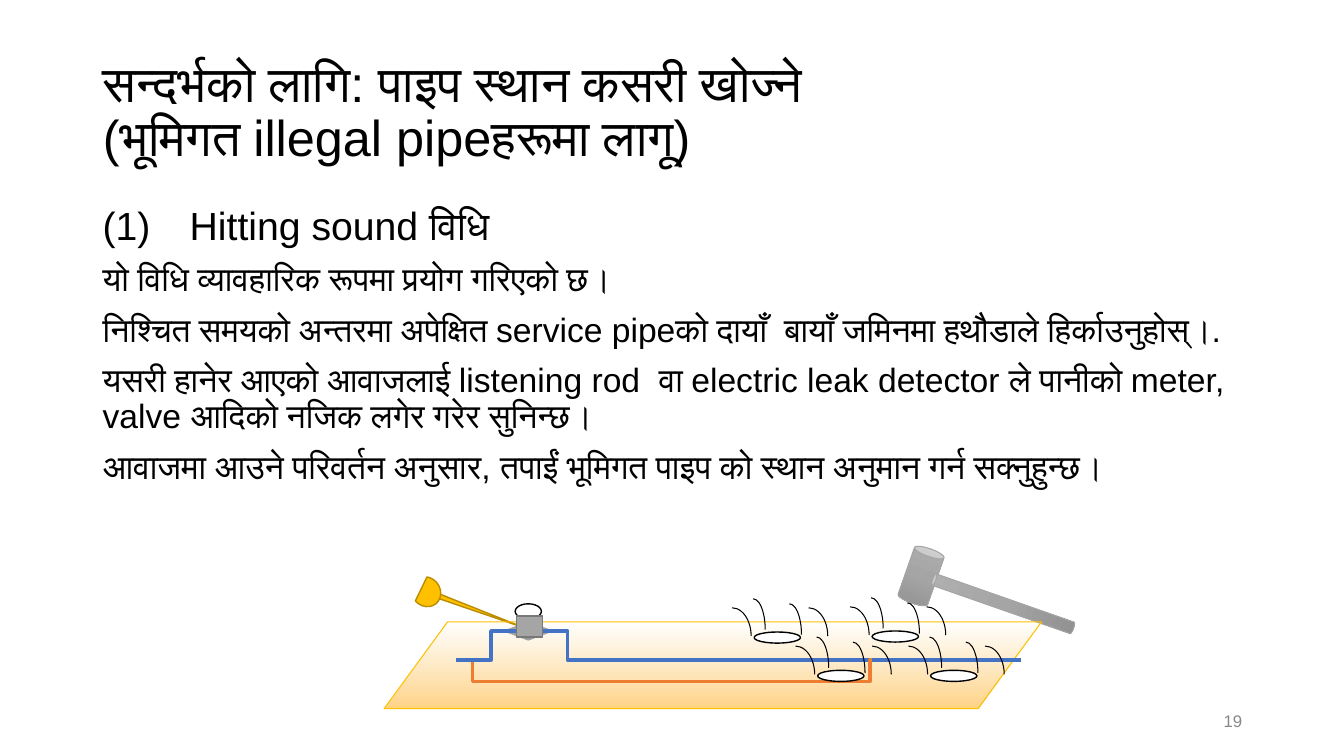
import dataclasses

import lxml.etree
import pptx
import pptx.dml.color
import pptx.enum.shapes
import pptx.enum.text
import pptx.oxml
import pptx.oxml.ns
import pptx.util

Inches = pptx.util.Inches
SHAPES = pptx.enum.shapes.MSO_SHAPE
CONNECTORS = pptx.enum.shapes.MSO_CONNECTOR
ALIGN = pptx.enum.text.PP_ALIGN
ANCHOR = pptx.enum.text.MSO_ANCHOR
qn = pptx.oxml.ns.qn


@dataclasses.dataclass(frozen=True)
class Theme:
    font: str = "Arial"
    ink: str = "000000"
    muted: str = "888888"
    white: str = "FFFFFF"
    gold: str = "FFC000"
    gold_edge: str = "BA8C00"
    grey: str = "A5A5A5"
    grey_edge: str = "787878"
    blue: str = "4472C4"
    orange: str = "ED7D31"
    title: int = 36
    heading: int = 28
    body: int = 24
    small: int = 12
    thin: float = 0.75
    outline: float = 1
    pipe: float = 2.5
    # Gradient stops: position in percent, colour, opacity in percent
    metal: tuple = ((0, "AFAFAF", 100), (50, "A5A5A5", 100), (100, "919191", 100))
    ground: tuple = ((0, "FFDC9B", 0), (95, "FFD68D", 100), (100, "FFD478", 100))


THEME = Theme()

TITLE = "सन्दर्भको लागि: पाइप स्थान कसरी खोज्ने\v(भूमिगत illegal pipeहरूमा लागू)"
HEADING = "(1)\u3000Hitting sound विधि".replace("\u3000", "　")
STEPS = (
    "यो विधि व्यावहारिक रूपमा प्रयोग गरिएको छ।",
    "निश्चित समयको अन्तरमा अपेक्षित service pipeको दायाँ  बायाँ जमिनमा हथौडाले हिर्काउनुहोस्।.",
    "यसरी हानेर आएको आवाजलाई listening rod  वा electric leak detector ले पानीको meter, "
    "valve आदिको नजिक लगेर गरेर सुनिन्छ।",
    "आवाजमा आउने परिवर्तन अनुसार, तपाईं भूमिगत पाइप को स्थान अनुमान गर्न सक्नुहुन्छ।",
)


def rgb(value):
    return pptx.dml.color.RGBColor.from_string(value)


def assign(target, values):
    for name, value in values.items():
        setattr(target, name, value)


def place(shape, box):
    names = ("left", "top", "width", "height")
    assign(shape, dict(zip(names, map(Inches, box))))


def write(shape, lines, anchor=ANCHOR.TOP, align=ALIGN.LEFT, spacing=0.9):
    """Fill a text shape with (text, size, colour) lines."""
    frame = shape.text_frame
    assign(frame, {
        "word_wrap": True, "vertical_anchor": anchor,
        "auto_size": pptx.enum.text.MSO_AUTO_SIZE.NONE,
        "margin_left": Inches(0.1), "margin_right": Inches(0.1),
        "margin_top": Inches(0.05), "margin_bottom": Inches(0.05),
    })
    for index, (text, size, color) in enumerate(lines):
        para = frame.add_paragraph() if index else frame.paragraphs[0]
        para.text = text
        assign(para, {"alignment": align, "line_spacing": spacing,
                      "space_before": pptx.util.Pt(10 if index else 0)})
        for span in para.runs:
            assign(span.font, {"name": THEME.font, "size": pptx.util.Pt(size)})
            span.font.color.rgb = rgb(color)


def fill_gradient(shape, stops):
    shape.fill.gradient()
    shape.fill.gradient_angle = 270
    stop_list = shape.fill._xPr.find(qn("a:gradFill")).find(qn("a:gsLst"))
    for stop in list(stop_list):
        stop_list.remove(stop)
    for position, color, opacity in stops:
        stop = lxml.etree.SubElement(stop_list, qn("a:gs"), pos=str(position * 1000))
        tint = lxml.etree.SubElement(stop, qn("a:srgbClr"), val=color)
        if opacity < 100:
            lxml.etree.SubElement(tint, qn("a:alpha"), val=str(opacity * 1000))


def add_part(group, kind, box, fill, edge, weight=THEME.outline, turn=0):
    part = group.shapes.add_shape(kind, *map(Inches, box))
    part.shadow.inherit = False
    part.rotation = turn
    if fill is None:
        part.fill.background()
    elif isinstance(fill, tuple):
        fill_gradient(part, fill)
    else:
        part.fill.solid()
        part.fill.fore_color.rgb = rgb(fill)
    part.line.color.rgb = rgb(edge)
    part.line.width = pptx.util.Pt(weight)
    return part


def add_pipe(group, start, end, color, bend=None):
    kind = CONNECTORS.STRAIGHT if bend is None else CONNECTORS.ELBOW
    pipe = group.shapes.add_connector(kind, *map(Inches, start + end))
    pipe.line.color.rgb = rgb(color)
    pipe.line.width = pptx.util.Pt(THEME.pipe)
    properties = pipe._element.spPr
    lxml.etree.SubElement(properties, qn("a:effectLst"))
    if bend is not None:
        guides = properties.find(qn("a:prstGeom")).get_or_add_avLst()
        lxml.etree.SubElement(guides, qn("a:gd"), name="adj1",
                              fmla=f"val {round(bend * 100000)}")


def add_title(page, box):
    title = page.shapes.title
    place(title, box)
    write(title, [(TITLE, THEME.title, THEME.ink)], ANCHOR.MIDDLE)


def add_body(page, box):
    body = page.shapes.add_textbox(*map(Inches, box))
    lines = [(HEADING, THEME.heading, THEME.ink)]
    lines += [(step, THEME.body, THEME.ink) for step in STEPS]
    write(body, lines)


def add_page_number(page, box):
    number = page.shapes.add_textbox(*map(Inches, box))
    write(number, [("19", THEME.small, THEME.muted)], ANCHOR.MIDDLE, ALIGN.RIGHT, 1)


def add_impact(group, left, top):
    """A struck spot with two sound waves on either side."""
    add_part(group, SHAPES.OVAL, (left, top, 0.46, 0.11), THEME.white, THEME.ink)
    wide, narrow = (0.38, 0.56), (0.24, 0.61)
    waves = ((-0.41, -0.24, wide), (-0.13, -0.33, narrow),
             (0.23, -0.28, narrow), (0.35, -0.24, wide))
    for shift, rise, size in waves:
        add_part(group, SHAPES.ARC, (left + shift, top + rise) + size,
                 None, THEME.ink, THEME.thin)


def add_scene(page, left, top):
    group = page.shapes.add_group_shape()

    def part(kind, x, y, width, height, *style):
        return add_part(group, kind, (left + x, top + y, width, height), *style)

    def pipe(x1, y1, x2, y2, color, bend=None):
        add_pipe(group, (left + x1, top + y1), (left + x2, top + y2), color, bend)

    # Listening rod and hammer
    gold = (THEME.gold, THEME.gold_edge, THEME.outline)
    metal = (THEME.metal, THEME.grey, THEME.thin)
    part(SHAPES.ISOSCELES_TRIANGLE, 0.91, 0.31, 0.05, 1, *gold, 110.3)
    part(SHAPES.CHORD, 0.26, 0.48, 0.31, 0.28, *gold, 228.9)
    part(SHAPES.CAN, 5.17, 0.18, 0.31, 0.57, *metal, 19.3)
    part(SHAPES.CAN, 6.08, 0, 0.12, 1.48, *metal, 289.3)

    # Ground and meter pit
    ground = part(SHAPES.PARALLELOGRAM, 0, 0.92, 6.52, 0.86,
                  THEME.ground, THEME.gold, THEME.thin)
    ground.adjustments[0] = 0.732
    part(SHAPES.DIAMOND, 1.19, 0.92, 0.48, 0.18, *metal)

    # Service pipe in blue, illegal branch in orange
    raised, level, buried = 1.01, 1.3, 1.51
    pipe(2.23, level, 1.41, raised, THEME.blue, 0.5)
    pipe(0.91, level, 1.82, buried, THEME.orange, -0.035)
    pipe(6.32, level, 2.23, level, THEME.blue)
    pipe(1.41, raised, 0.71, level, THEME.blue, 0.5)

    # Meter
    part(SHAPES.OVAL, 1.3, 0.74, 0.26, 0.15, THEME.white, THEME.ink)
    part(SHAPES.RECTANGLE, 1.31, 0.86, 0.26, 0.21, THEME.grey, THEME.grey_edge)
    pipe(1.82, buried, 4.84, level, THEME.orange, 0.993)

    # Struck spots
    for x, y in ((3.67, 1.02), (4.84, 1.01), (5.42, 1.4), (4.3, 1.4)):
        add_impact(group, left + x, top + y)


def main():
    deck = pptx.Presentation()
    assign(deck, {"slide_width": Inches(13.33), "slide_height": Inches(7.5)})
    page = deck.slides.add_slide(deck.slide_layouts[5])
    add_title(page, (0.92, 0.4, 11.5, 1.45))
    add_body(page, (0.92, 2, 11.5, 3.66))
    add_scene(page, 3.81, 5.25)
    add_page_number(page, (9.42, 6.95, 3, 0.4))
    deck.save("out.pptx")


if __name__ == "__main__":
    main()
